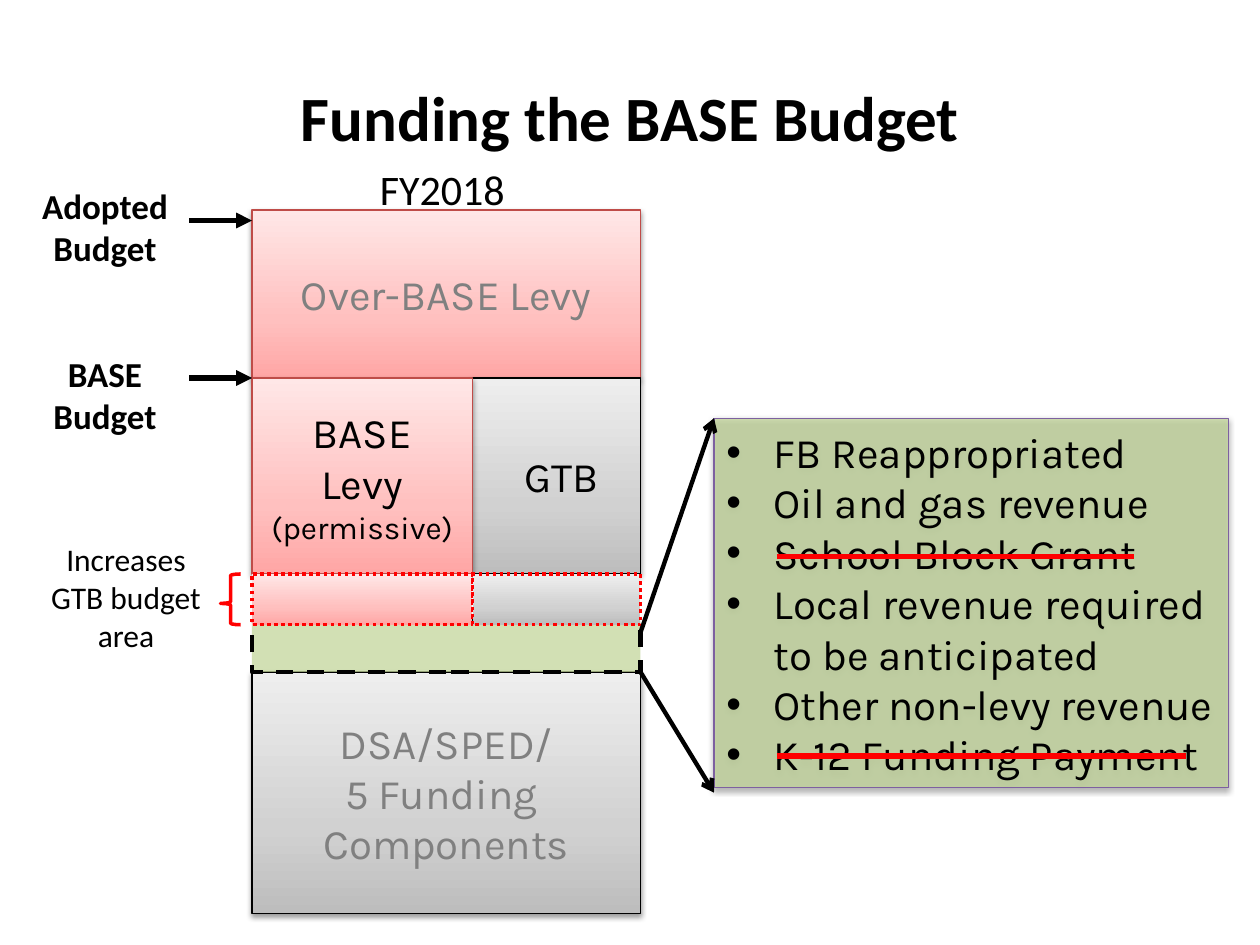
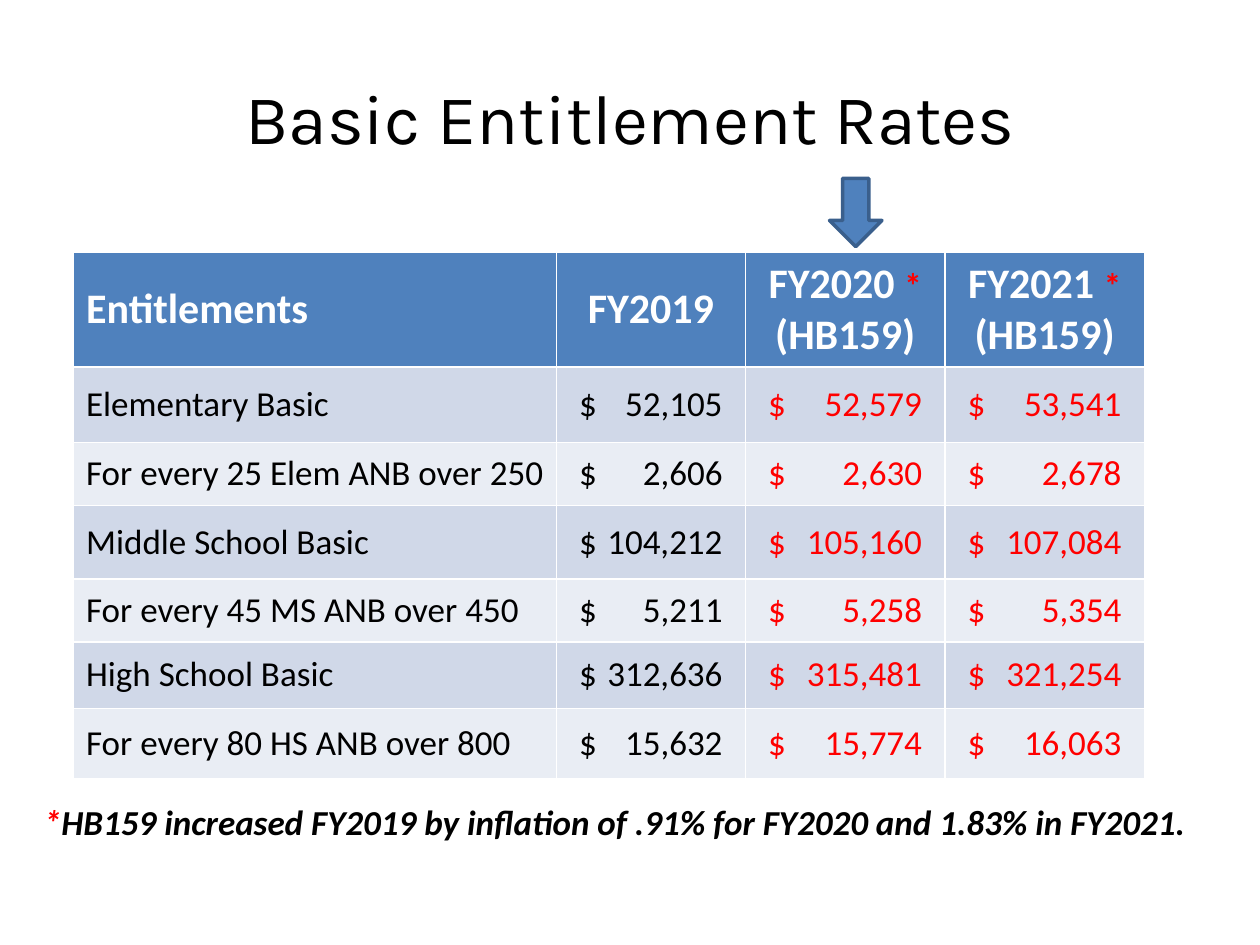
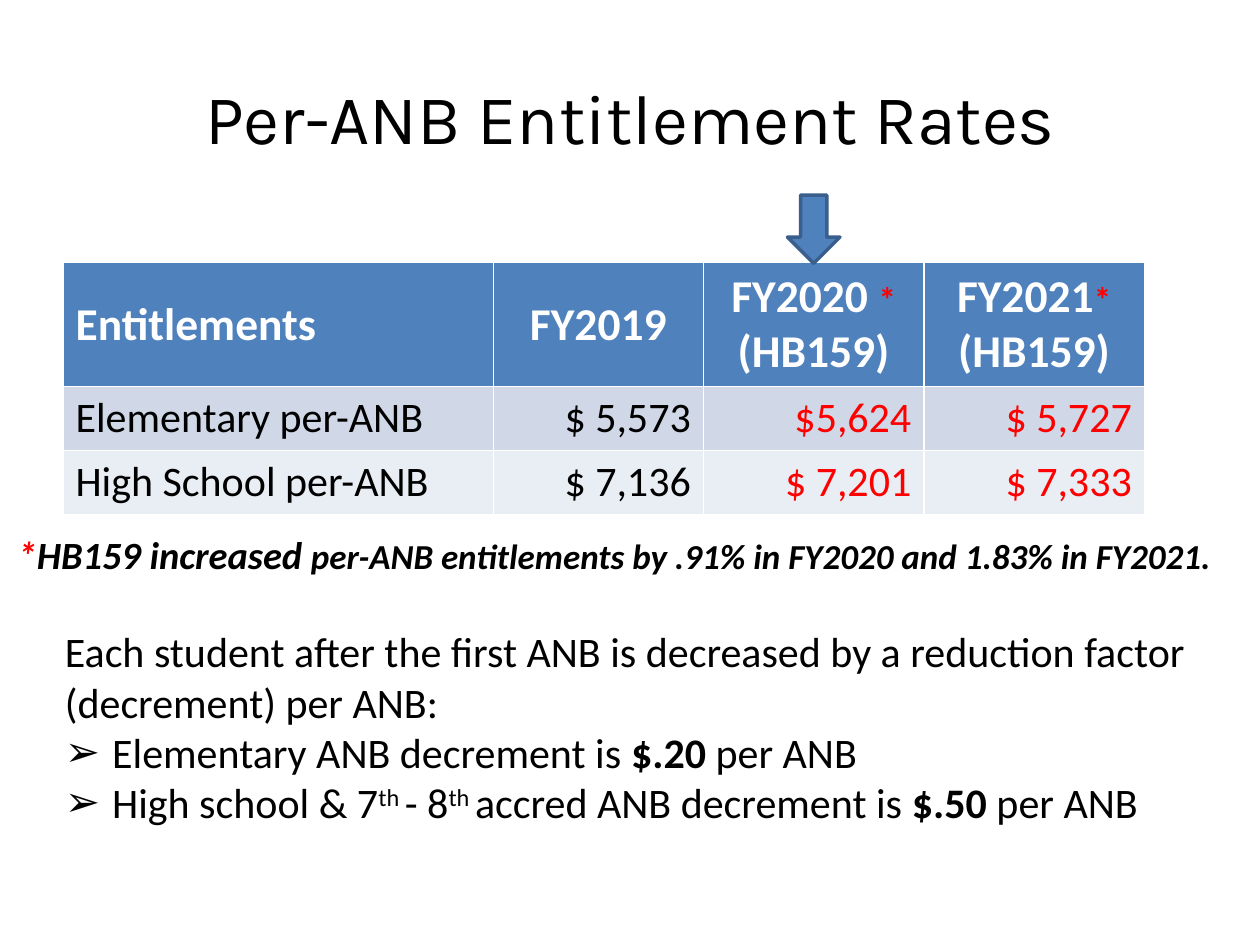
from dataclasses import dataclass, field
from typing import Any, NamedTuple

from lxml.etree import SubElement
from pptx import Presentation
from pptx.dml.color import RGBColor
from pptx.enum.dml import MSO_LINE
from pptx.enum.shapes import MSO_CONNECTOR, MSO_SHAPE
from pptx.enum.text import MSO_ANCHOR, PP_ALIGN
from pptx.oxml.ns import qn
from pptx.slide import Slide
from pptx.util import Pt

BLACK, WHITE, RED, GRAY = "000000", "FFFFFF", "FF0000", "808080"
BLUE, NAVY, GREEN, PURPLE, BRICK = "4F81BD", "3A5F8C", "C3D69B", "7D60A0", "BF4C48"
BANDS = ("D0D8E8", "E9EDF4")
PINK = ((0, "FFA6A5"), (35, "FFC0BF"), (100, "FFE7E7"))
SILVER = ((0, "BDBDBD"), (35, "D1D1D1"), (100, "EEEEEE"))
LEFT, MID, RIGHT = PP_ALIGN.LEFT, PP_ALIGN.CENTER, PP_ALIGN.RIGHT
PAD = 13


class Run(NamedTuple):
    """A piece of text with the format that sets it apart."""
    text: str
    fmt: dict[str, Any] = {}


Paras = list[list[Run]]


class Area(NamedTuple):
    """Left, top, width and height in points."""
    left: float
    top: float
    width: float
    height: float


@dataclass
class Box:
    """A preset shape with its fill, outline and text."""
    area: Area
    fill: Any
    edge: str
    weight: float = 0.75
    dash: Any = None
    shade: bool = False
    paras: Paras = field(default_factory=list)
    color: str = BLACK
    align: Any = MID
    wrap: bool = False
    kind: Any = MSO_SHAPE.RECTANGLE


@dataclass
class Label:
    """A text box with one base format."""
    area: Area
    paras: Paras
    size: float
    align: Any = LEFT
    wrap: bool = True
    bold: bool = False
    italic: bool = False


class Line(NamedTuple):
    """A straight line with an optional arrowhead."""
    start: tuple[float, float]
    end: tuple[float, float]
    color: str
    weight: float
    head: str = ""


class Grid(NamedTuple):
    """A rate table; tabs set the dollar sign apart from the amount."""
    left: float
    top: float
    cols: list[float]
    rows: list[float]
    sizes: tuple[int, int]
    heads: list[list[Run]]
    data: list[tuple[str, ...]]
    tabs: bool


def ink(code: str) -> RGBColor:
    """Turn a hex string into a colour."""
    return RGBColor.from_string(code)


def pts(values: Any) -> list[Pt]:
    """Turn numbers into lengths."""
    return [Pt(value) for value in values]


def lines(*texts: str) -> Paras:
    """Make one plain paragraph of each text."""
    return [[Run(text)] for text in texts]


def style(run: Any, fmt: dict[str, Any]) -> None:
    """Apply a dict of format values to a run."""
    for key, value in fmt.items():
        if key == "color":
            run.font.color.rgb = ink(value)
        elif key == "raised":
            run.font._element.set("baseline", "30000")
        else:
            setattr(run.font, key, Pt(value) if key == "size" else value)


def write(frame: Any, paras: Paras, align: Any = LEFT, **base: Any) -> None:
    """Fill a text frame with paragraphs of runs."""
    for index, runs in enumerate(paras):
        para = frame.add_paragraph() if index else frame.paragraphs[0]
        para.alignment = align
        for item in runs:
            run = para.add_run()
            run.text = item.text
            style(run, {**base, **item.fmt})


def bullet(paras: Any, char: str) -> None:
    """Give paragraphs a hanging bullet."""
    for para in paras:
        props = para._p.get_or_add_pPr()
        props.set("marL", str(Pt(27)))
        props.set("indent", str(-Pt(27)))
        SubElement(props, qn("a:buFont"), typeface="Arial")
        SubElement(props, qn("a:buChar"), char=char)


def paint(shape: Any, fill: Any) -> None:
    """Fill with nothing, a colour, a see-through colour or a gradient."""
    if fill is None:
        shape.fill.background()
    elif fill in (PINK, SILVER):
        shape.fill.gradient()
        shape.fill.gradient_angle = 90
        stops = shape._element.spPr.find(".//" + qn("a:gsLst"))
        stops.clear()
        for place, code in fill:
            stop = SubElement(stops, qn("a:gs"), pos=str(place * 1000))
            SubElement(stop, qn("a:srgbClr"), val=code)
    else:
        shape.fill.solid()
        shape.fill.fore_color.rgb = ink(fill)
        if fill == GREEN:
            tint = shape._element.spPr.find(qn("a:solidFill"))[0]
            SubElement(tint, qn("a:alpha"), val="75000")


def cast(shape: Any) -> None:
    """Add a soft shadow below a shape."""
    effects = shape._element.spPr.find(qn("a:effectLst"))
    drop = SubElement(effects, qn("a:outerShdw"), blurRad=str(Pt(3.1)),
                      dist=str(Pt(1.6)), dir="5400000", rotWithShape="0")
    tint = SubElement(drop, qn("a:srgbClr"), val=BLACK)
    SubElement(tint, qn("a:alpha"), val="38000")


def add_box(slide: Slide, box: Box) -> Any:
    """Draw a box."""
    shape = slide.shapes.add_shape(box.kind, *pts(box.area))
    shape.shadow.inherit = False
    paint(shape, box.fill)
    shape.line.color.rgb = ink(box.edge)
    shape.line.width = Pt(box.weight)
    if box.dash:
        shape.line.dash_style = box.dash
    if box.shade:
        cast(shape)
    frame = shape.text_frame
    frame.word_wrap = box.wrap
    frame.vertical_anchor = MSO_ANCHOR.MIDDLE
    write(frame, box.paras, box.align, name="Karla", size=24, color=box.color)
    return shape


def add_label(slide: Slide, label: Label) -> Any:
    """Draw a text box."""
    frame = slide.shapes.add_textbox(*pts(label.area)).text_frame
    frame.word_wrap = label.wrap
    write(frame, label.paras, label.align, name="Calibri", size=label.size,
          color=BLACK, bold=label.bold, italic=label.italic)
    return frame


def add_line(slide: Slide, line: Line) -> None:
    """Draw a line or an arrow."""
    shape = slide.shapes.add_connector(
        MSO_CONNECTOR.STRAIGHT, *pts(line.start + line.end))
    shape.line.color.rgb = ink(line.color)
    shape.line.width = Pt(line.weight)
    if line.head:
        SubElement(shape.line._get_or_add_ln(), qn("a:tailEnd"), type=line.head)
    SubElement(shape._element.spPr, qn("a:effectLst"))


def add_grid(slide: Slide, grid: Grid) -> None:
    """Draw a rate table."""
    frame = slide.shapes.add_table(
        len(grid.rows), len(grid.cols),
        *pts((grid.left, grid.top, sum(grid.cols), sum(grid.rows))))
    table = frame.table
    for col, width in zip(table.columns, grid.cols):
        col.width = Pt(width)
    for row, height in zip(table.rows, grid.rows):
        row.height = Pt(height)
    body = [[[Run(text)] for text in row] for row in grid.data]
    for down, row in enumerate([grid.heads] + body):
        for across, runs in enumerate(row):
            cell = table.cell(down, across)
            cell.vertical_anchor = MSO_ANCHOR.MIDDLE
            cell.fill.solid()
            cell.fill.fore_color.rgb = ink(BANDS[(down - 1) % 2] if down else BLUE)
            if not down:
                fmt = dict(size=grid.sizes[0], color=WHITE, bold=True)
                align = MID if across else LEFT
            else:
                fmt = dict(size=grid.sizes[1], color=RED if across > 1 else BLACK)
                align = RIGHT if across and not grid.tabs else LEFT
            write(cell.text_frame, [runs], align, name="Calibri", **fmt)
            if down and across and grid.tabs:
                cell.margin_left = Pt(PAD)
                props = cell.text_frame.paragraphs[0]._p.get_or_add_pPr()
                stops = SubElement(props, qn("a:tabLst"))
                SubElement(stops, qn("a:tab"), algn="r",
                           pos=str(Pt(grid.cols[across] - 2 * PAD)))


def add_page(deck: Any, text: str, **fmt: Any) -> Slide:
    """Add a slide with its title."""
    slide = deck.slides.add_slide(deck.slide_layouts[5])
    title = slide.shapes.title
    title.left, title.top, title.width, title.height = pts((36, 21.6, 648, 90))
    title.text_frame.vertical_anchor = MSO_ANCHOR.MIDDLE
    write(title.text_frame, lines(text), MID, color=BLACK, **fmt)
    return slide


def add_mark(slide: Slide, left: float, top: float) -> None:
    """Point at the current year's column."""
    add_box(slide, Box(Area(left, top, 30, 39), BLUE, NAVY, 2,
                       kind=MSO_SHAPE.DOWN_ARROW))


def fund_page(deck: Any) -> None:
    """Build the funding stack with its callout."""
    slide = add_page(deck, "Funding the BASE Budget",
                     name="Calibri", size=36, bold=True)
    left, split, wide = 144, 270, 222
    near, far = split - left, left + wide - split
    dots = dict(edge=RED, weight=2, dash=MSO_LINE.ROUND_DOT)
    base = lines("BASE", "Levy") + [[Run("(permissive)", {"size": 18})]]
    for box in (
        Box(Area(left, 120, wide, 96), PINK, BRICK, shade=True,
            paras=lines("Over-BASE Levy"), color=GRAY),
        Box(Area(left, 384, wide, 138), SILVER, BLACK, shade=True, color=GRAY,
            paras=lines("DSA/SPED/", "5 Funding ", "Components")),
        Box(Area(split, 216, far, 112), SILVER, BLACK, shade=True,
            paras=lines(" GTB")),
        Box(Area(left, 216, near, 112), PINK, BRICK, shade=True, paras=base),
        Box(Area(left, 355, wide, 29), GREEN, BLACK, 2.5, MSO_LINE.DASH),
        Box(Area(left, 328, near, 29), PINK, **dots),
        Box(Area(split, 328, far, 29), SILVER, **dots),
    ):
        add_box(slide, box)
    brace = add_box(slide, Box(Area(126, 328, 11.5, 29), None, RED, 2,
                               kind=MSO_SHAPE.LEFT_BRACE))
    brace.adjustments[0], brace.adjustments[1] = 0.08, 0.58
    notes = add_box(slide, Box(
        Area(408, 239, 294, 211), GREEN, PURPLE, shade=True, align=LEFT, wrap=True,
        paras=lines("FB Reappropriated", "Oil and gas revenue",
                    "School Block Grant",
                    "Local revenue required to be anticipated",
                    "Other non-levy revenue", "K-12 Funding Payment")))
    bullet(notes.text_frame.paragraphs, "•")
    for line in (
        Line((108, 216), (144, 216), BLACK, 3, "triangle"),
        Line((108, 126), (144, 126), BLACK, 3, "triangle"),
        Line((366, 361.5), (408, 239), BLACK, 2.5, "arrow"),
        Line((366, 384), (408, 453), BLACK, 2.5, "arrow"),
        Line((444, 318), (648, 318), RED, 3),
        Line((444, 432), (678, 432), RED, 3),
    ):
        add_line(slide, line)
    for label in (
        Label(Area(16.5, 102, 87, 56), lines("Adopted", "Budget"), 20, MID, False, True),
        Label(Area(23, 198, 74, 56), lines("BASE", "Budget"), 20, MID, False, True),
        Label(Area(210, 90, 90, 36), lines("FY2018"), 24),
        Label(Area(18, 305, 108, 73), lines("Increases GTB budget area"), 18, MID),
    ):
        add_label(slide, label)


def basic_page(deck: Any) -> None:
    """Build the basic entitlement rates."""
    slide = add_page(deck, "Basic Entitlement Rates", name="Karla", size=40)
    star = Run("*", {"size": 20, "color": RED})
    bill = Run(" (HB159)")
    add_grid(slide, Grid(
        42, 144, [276, 108, 114, 114], [64, 43, 36, 42, 36, 38, 40], (24, 20),
        [[Run("Entitlements")], [Run("FY2019")],
         [Run("FY2020 "), star, bill], [Run("FY2021 "), star, bill]],
        [("Elementary Basic", "$\t52,105", "$\t52,579", "$\t53,541"),
         ("For every 25 Elem ANB over 250", "$\t2,606", "$\t2,630", "$\t2,678"),
         ("Middle School Basic", "$\t104,212", "$\t105,160", "$\t107,084"),
         ("For every 45 MS ANB over 450", "$\t5,211", "$\t5,258", "$\t5,354"),
         ("High School Basic", "$\t312,636", "$\t315,481", "$\t321,254"),
         ("For every 80 HS ANB over 800", "$\t15,632", "$\t15,774", "$\t16,063")],
        True))
    add_mark(slide, 474, 102)
    note = [[Run("*", {"color": RED}),
             Run("HB159 increased FY2019 by inflation of .91% for FY2020 "
                 "and 1.83% in FY2021.")]]
    add_label(slide, Label(Area(18, 454, 672, 32), note, 20, bold=True, italic=True))


def pupil_page(deck: Any) -> None:
    """Build the per-ANB rates and the decrement."""
    slide = add_page(deck, "Per-ANB Entitlement Rates", name="Karla", size=40)
    star = Run("* ", {"size": 20, "color": RED})
    bill = Run("(HB159)")
    add_grid(slide, Grid(
        36, 150, [246, 120, 126, 126], [70, 36, 36], (26, 24),
        [[Run("Entitlements")], [Run("FY2019")],
         [Run("FY2020 "), star, bill], [Run("FY2021"), star, bill]],
        [("Elementary per-ANB", "$ 5,573", "$5,624", "$ 5,727"),
         ("High School per-ANB", "$ 7,136", "$ 7,201", "$ 7,333")],
        False))
    add_mark(slide, 450, 111.5)
    note = [[Run("*", {"color": RED}), Run("HB159 increased "),
             Run("per-ANB entitlements by .91% in FY2020 and 1.83% in FY2021.",
                 {"size": 20})]]
    add_label(slide, Label(Area(3, 300, 699, 34), note, 22, bold=True, italic=True))
    bold, th = {"bold": True}, Run("th ", {"raised": True})
    cuts = lines("Each student after the first ANB is decreased by a reduction "
                 "factor (decrement) per ANB:") + [
        [Run("Elementary ANB decrement is "), Run("$.20", bold), Run(" per ANB")],
        [Run("High school & 7"), th, Run("- 8"), th,
         Run("accred ANB decrement is "), Run("$.50", bold), Run(" per ANB")]]
    frame = add_label(slide, Label(Area(30, 354, 660, 124), cuts, 24))
    bullet(frame.paragraphs[1:], "➢")


def main() -> None:
    """Build and save the deck."""
    deck = Presentation()
    deck.slide_width, deck.slide_height = pts((720, 540))
    for build in (fund_page, basic_page, pupil_page):
        build(deck)
    deck.save("out.pptx")


if __name__ == "__main__":
    main()
